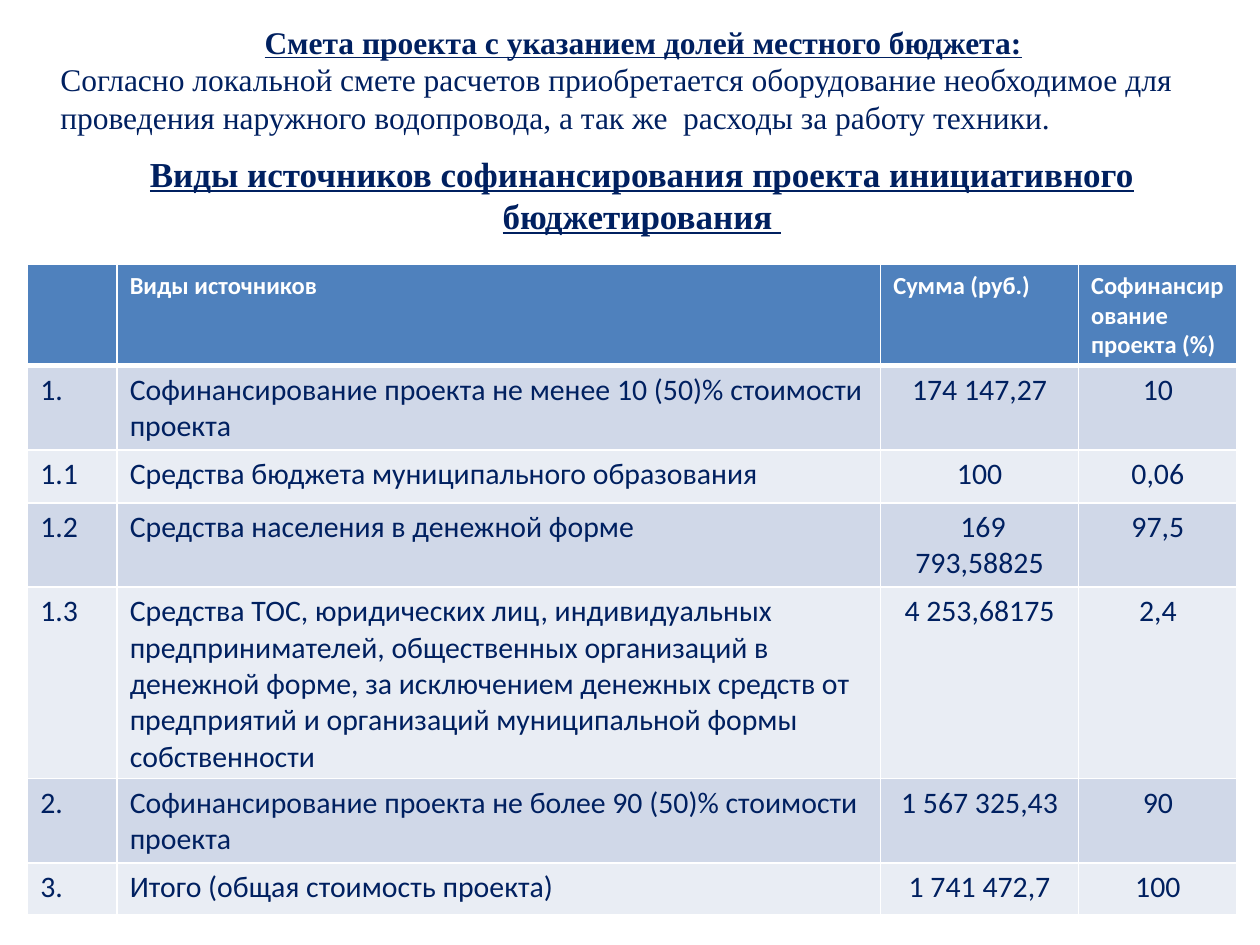
from lxml import etree
from pptx import Presentation
from pptx.dml.color import RGBColor
from pptx.enum.text import MSO_AUTO_SIZE, PP_ALIGN
from pptx.oxml.ns import qn
from pptx.util import Inches, Pt

NAVY, WHITE, HEADER_BLUE = "002060", "FFFFFF", "4F81BD"
BANDS = ("D0D8E8", "E9EDF4")

COLUMN_WIDTHS = (0.71, 6.06, 1.57, 1.26)
ROW_HEIGHTS = (0.79, 0.67, 0.42, 0.67, 1.52, 0.67, 0.41)
SOURCES = (
    ("", "Виды источников", "Сумма (руб.)", "Софинансирование проекта (%)"),
    ("1.", "Софинансирование проекта не менее 10 (50)% стоимости проекта",
     "174 147,27", "10"),
    ("1.1", "Средства бюджета муниципального образования", "100", "0,06"),
    ("1.2", "Средства населения в денежной форме", " 169 793,58825", "97,5"),
    ("1.3", "Средства ТОС, юридических лиц, индивидуальных предпринимателей, "
     "общественных организаций в денежной форме, за исключением денежных "
     "средств от предприятий и организаций муниципальной формы собственности",
     "4 253,68175", "2,4"),
    ("2.", "Софинансирование проекта не более 90 (50)% стоимости проекта",
     "1 567 325,43", "90"),
    ("3.", "Итого (общая стоимость проекта)", "1 741 472,7", "100"),
)


def color(value):
    return RGBColor.from_string(value)


def style(paragraph, font_name, size, hex_color, bold, underline=False):
    for run in paragraph.runs:
        font = run.font
        font.name, font.size = font_name, Pt(size)
        font.bold, font.underline = bold, underline
        font.color.rgb = color(hex_color)


def add_text(slide, left, top, width, height, size, paragraphs):
    """Each paragraph is (text, is_heading); headings are centred."""
    frame = slide.shapes.add_textbox(
        Inches(left), Inches(top), Inches(width), Inches(height)).text_frame
    frame.word_wrap = True
    frame.auto_size = MSO_AUTO_SIZE.SHAPE_TO_FIT_TEXT
    frame.text = "\n".join(text for text, _ in paragraphs)
    for paragraph, (_, heading) in zip(frame.paragraphs, paragraphs):
        paragraph.alignment = PP_ALIGN.CENTER if heading else PP_ALIGN.LEFT
        style(paragraph, "Times New Roman", size, NAVY, heading, heading)


def set_borders(cell, top, bottom):
    properties = cell._tc.get_or_add_tcPr()
    for side, width in (("L", 1), ("R", 1), ("T", top), ("B", bottom)):
        line = etree.SubElement(properties, qn(f"a:ln{side}"), w=str(Pt(width)))
        fill = etree.SubElement(line, qn("a:solidFill"))
        etree.SubElement(fill, qn("a:srgbClr"), val=WHITE)


def add_sources_table(slide, left, top):
    table = slide.shapes.add_table(
        len(SOURCES), len(COLUMN_WIDTHS), Inches(left), Inches(top),
        Inches(sum(COLUMN_WIDTHS)), Inches(sum(ROW_HEIGHTS))).table
    for column, width in zip(table.columns, COLUMN_WIDTHS):
        column.width = Inches(width)
    for r, (height, values) in enumerate(zip(ROW_HEIGHTS, SOURCES)):
        table.rows[r].height = Inches(height)
        header = r == 0
        for c, value in enumerate(values):
            cell = table.cell(r, c)
            # The rule under the header is thicker
            set_borders(cell, 3 if r == 1 else 1, 3 if header else 1)
            cell.fill.solid()
            cell.fill.fore_color.rgb = color(
                HEADER_BLUE if header else BANDS[(r - 1) % 2])
            cell.text_frame.text = value
            paragraph = cell.text_frame.paragraphs[0]
            if header:
                style(paragraph, "Calibri", 14, WHITE, True)
            else:
                style(paragraph, "Calibri", 17, NAVY, False)
                if c >= 2:
                    paragraph.alignment = PP_ALIGN.CENTER


def main():
    presentation = Presentation()
    presentation.slide_width, presentation.slide_height = Inches(10), Inches(7.5)
    slide = presentation.slides.add_slide(presentation.slide_layouts[6])

    # Estimate summary
    add_text(slide, 0.38, 0.13, 9.45, 1.01, 18, (
        ("Смета проекта с указанием долей местного бюджета:", True),
        ("Согласно локальной смете расчетов приобретается оборудование "
         "необходимое для проведения наружного водопровода, а так же  расходы "
         "за работу техники.", False)))
    # Table heading
    add_text(slide, 0.37, 1.16, 9.45, 0.77, 20, (
        ("Виды источников софинансирования проекта инициативного "
         "бюджетирования ", True),))
    # Funding sources
    add_sources_table(slide, 0.22, 2.1)

    presentation.save("out.pptx")


if __name__ == "__main__":
    main()
